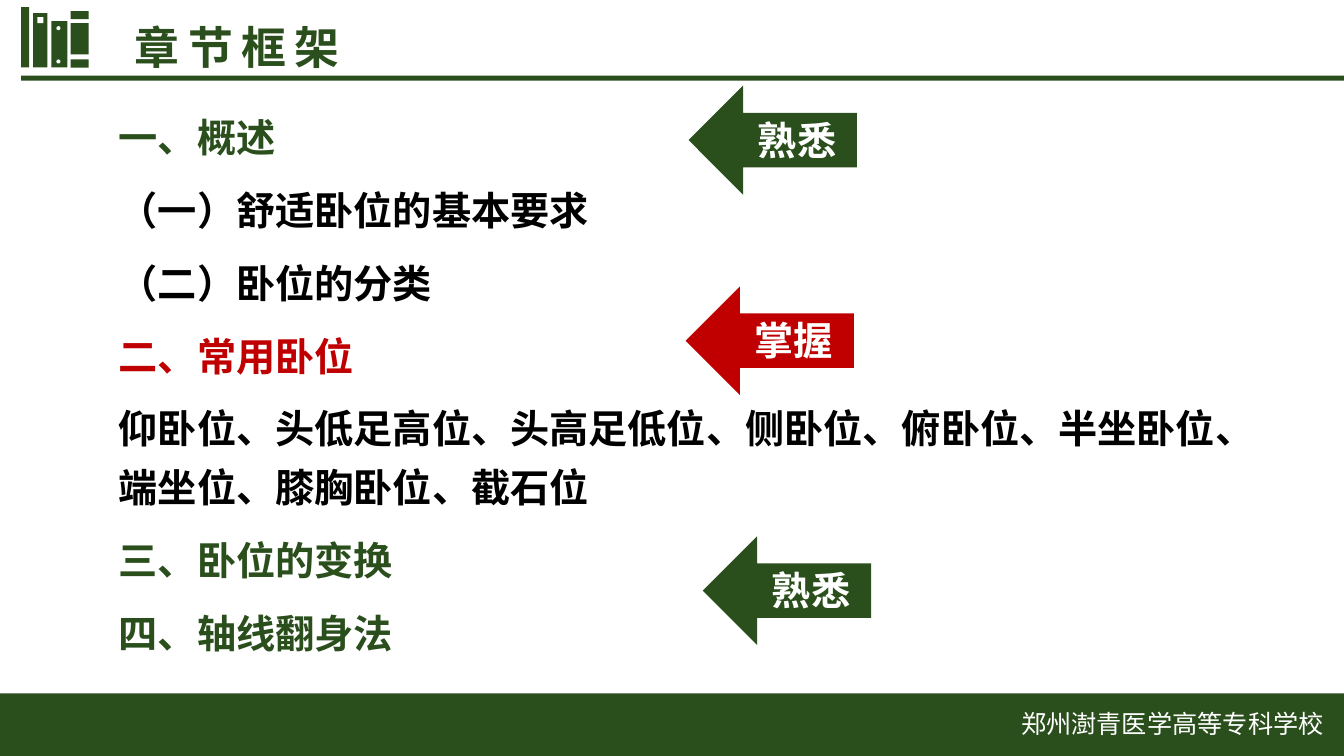
from lxml import etree
from pptx import Presentation
from pptx.dml.color import RGBColor
from pptx.enum.shapes import MSO_SHAPE
from pptx.enum.text import MSO_ANCHOR, PP_ALIGN
from pptx.oxml.ns import qn
from pptx.util import Inches, Pt

RECT, ROUND = MSO_SHAPE.RECTANGLE, MSO_SHAPE.ROUNDED_RECTANGLE
OVAL, ARROW = MSO_SHAPE.OVAL, MSO_SHAPE.LEFT_ARROW
MIDDLE, CENTER = MSO_ANCHOR.MIDDLE, PP_ALIGN.CENTER

GREEN = RGBColor(0x2A, 0x4F, 0x1C)
RED = RGBColor(0xC0, 0x00, 0x00)
BLACK = RGBColor(0x00, 0x00, 0x00)
WHITE = RGBColor(0xFF, 0xFF, 0xFF)

FACE = "Noto Sans CJK SC"
COLS, ROWS = 13.33, 7.5
CELL = Inches(1)  # one grid column or row

BOOKS = [
    (0.21, 0.07, 0.08, 0.6),
    (0.33, 0.13, 0.14, 0.54),
    (0.51, 0.21, 0.16, 0.46),
    (0.7, 0.11, 0.18, 0.08),
    (0.7, 0.23, 0.18, 0.31),
    (0.7, 0.59, 0.18, 0.08),
]
HOLES = [
    (RECT, (0.37, 0.17, 0.06, 0.06)),
    (OVAL, (0.56, 0.26, 0.04, 0.04)),
    (OVAL, (0.56, 0.59, 0.04, 0.04)),
]
TOPICS = [
    ("一、概述", GREEN),
    ("（一）舒适卧位的基本要求", BLACK),
    ("（二）卧位的分类", BLACK),
    ("二、常用卧位", RED),
    ("仰卧位、头低足高位、头高足低位、侧卧位、俯卧位、半坐卧位、"
     "端坐位、膝胸卧位、截石位", BLACK),
    ("三、卧位的变换", GREEN),
    ("四、轴线翻身法", GREEN),
]
LEVELS = [
    ("熟悉", GREEN, 6.83, 0.85),
    ("熟悉", GREEN, 6.97, 5.32),
    ("掌握", RED, 6.8, 2.84),
]


class Deck:
    def __init__(self):
        self.prs = Presentation()
        self.prs.slide_width = round(COLS * CELL)
        self.prs.slide_height = round(ROWS * CELL)
        self.slide = self.prs.slides.add_slide(self.prs.slide_layouts[6])

    def grid(self, box):
        """Turn columns and rows into lengths."""
        return [round(part * CELL) for part in box]

    def style(self, para, text, size, color, bold=True, gap=0):
        """Fill one paragraph; gap is the letter spacing in points."""
        para.text = text
        font = para.font
        font.name, font.size, font.bold = FACE, Pt(size), bold
        font.color.rgb = color
        props = para._p.pPr.find(qn("a:defRPr"))
        etree.SubElement(props, qn("a:ea")).set("typeface", FACE)
        if gap:
            props.set("spc", str(gap * 100))

    def shape(self, kind, box, color):
        item = self.slide.shapes.add_shape(kind, *self.grid(box))
        item.shadow.inherit = False
        item.fill.solid()
        item.fill.fore_color.rgb = color
        item.line.fill.background()
        return item

    def text(self, box, lines, size, bold=True, gap=0, wrap=True):
        frame = self.slide.shapes.add_textbox(*self.grid(box)).text_frame
        frame.word_wrap = wrap
        for i, (line, color) in enumerate(lines):
            para = frame.add_paragraph() if i else frame.paragraphs[0]
            if len(lines) > 1:
                para.line_spacing = 1.25
                para.space_before = Pt(10 if i else 0)
            self.style(para, line, size, color, bold, gap)

    def level(self, word, color, left, top):
        """Draw an arrow with its label on the shaft."""
        self.shape(ARROW, (left, top, 1.67, 1.08), color)
        label = self.shape(ROUND, (left + 0.5, top + 0.34, 1.15, 0.39), color)
        frame = label.text_frame
        frame.vertical_anchor = MIDDLE
        para = frame.paragraphs[0]
        para.alignment = CENTER
        self.style(para, word, 28, WHITE)


def main():
    deck = Deck()
    deck.shape(RECT, (0, 6.88, COLS, 0.62), GREEN)
    deck.shape(RECT, (0.21, 0.75, 13.12, 0.05), GREEN)
    for book in BOOKS:
        deck.shape(RECT, book, GREEN)
    for kind, box in HOLES:
        deck.shape(kind, box, WHITE)
    deck.text((1.08, 0.96, 11.52, 5.43), TOPICS, 28)
    deck.text((1.24, 0.15, 3.62, 0.48), [("章节框架", GREEN)], 32, gap=6)
    deck.text((10.03, 6.98, 3.23, 0.4), [("郑州澍青医学高等专科学校", WHITE)],
              18, bold=False, wrap=False)
    for level in LEVELS:
        deck.level(*level)
    deck.prs.save("out.pptx")


if __name__ == "__main__":
    main()
